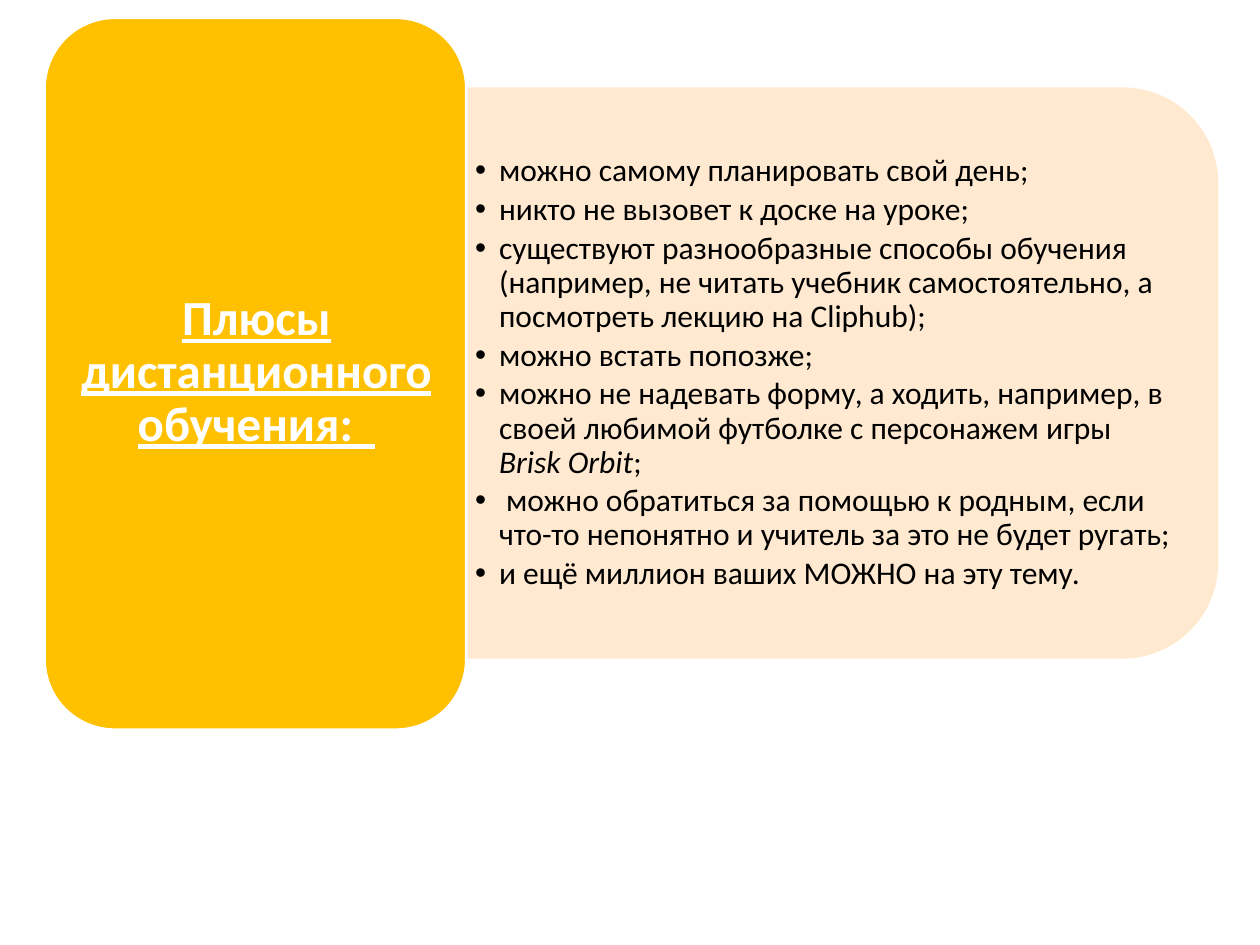
from lxml.etree import SubElement
from pptx import Presentation
from pptx.dml.color import RGBColor
from pptx.enum.shapes import MSO_SHAPE
from pptx.enum.text import MSO_ANCHOR, MSO_AUTO_SIZE, PP_ALIGN
from pptx.oxml.ns import qn
from pptx.util import Cm, Pt

COLORS = {"panel": "FFE8CC", "card": "FFC000", "white": "FFFFFF", "text": "000000"}
FONT = "Calibri"
TITLE = "Плюсы дистанционного обучения:  "
ADVANTAGES = [
    ["можно самому планировать свой день;"],
    ["никто не вызовет к доске на уроке;"],
    ["существуют разнообразные способы обучения (например, не читать учебник "
     "самостоятельно, а посмотреть лекцию на Cliphub);"],
    ["можно встать попозже;"],
    ["можно не надевать форму, а ходить, например, в своей любимой футболке "
     "с персонажем игры ", "Brisk Orbit", ";"],
    [" можно обратиться за помощью к родным, если что-то непонятно и учитель "
     "за это не будет ругать;"],
    ["и ещё миллион ваших МОЖНО на эту тему."],
]


def color(name):
    """Return the named palette colour."""
    return RGBColor.from_string(COLORS[name])


def add_backdrop(slide, kind, box, fill, line, line_width):
    """Add a filled shape behind the placeholders."""
    shape = slide.shapes.add_shape(kind, *map(Cm, box))
    shape.shadow.inherit = False
    shape.fill.solid()
    shape.fill.fore_color.rgb = color(fill)
    shape.line.color.rgb = color(line)
    shape.line.width = Pt(line_width)
    tree = shape.element.getparent()
    tree.insert(2, shape.element)
    return shape


def set_opacity(shape, percent):
    """Make the fill and line of a shape partly transparent."""
    for element in shape.element.spPr.iter(qn("a:srgbClr")):
        SubElement(element, qn("a:alpha"), val=str(percent * 1000))


def place_frame(placeholder, box, margins):
    """Position a placeholder and return its middle-anchored text frame."""
    placeholder.left, placeholder.top, placeholder.width, placeholder.height = map(Cm, box)
    frame = placeholder.text_frame
    frame.word_wrap = True
    frame.auto_size = MSO_AUTO_SIZE.NONE
    frame.vertical_anchor = MSO_ANCHOR.MIDDLE
    frame.margin_left = frame.margin_right = Cm(margins[0])
    frame.margin_top = frame.margin_bottom = Cm(margins[1])
    return frame


def format_paragraph(paragraph, alignment, space_after):
    """Set alignment and spacing of a paragraph."""
    paragraph.alignment = alignment
    paragraph.line_spacing = 0.9
    paragraph.space_before = Pt(0)
    paragraph.space_after = Pt(space_after)


def format_run(run, size, fill):
    """Set font, size and colour of a run."""
    run.font.name = FONT
    run.font.size = Pt(size)
    run.font.color.rgb = color(fill)


def add_bullet(paragraph):
    """Give a paragraph a round bullet with a hanging indent."""
    properties = paragraph._p.get_or_add_pPr()
    properties.set("marL", str(Cm(0.48)))
    properties.set("indent", str(-Cm(0.48)))
    SubElement(properties, qn("a:buFont"), typeface="Arial")
    SubElement(properties, qn("a:buChar"), char="•")


def fill_title(placeholder):
    """Write the underlined heading on the card."""
    frame = place_frame(placeholder, (1.32, 0.76, 7.7, 13.52), (0.28, 0.15))
    frame.text = TITLE
    paragraph = frame.paragraphs[0]
    format_paragraph(paragraph, PP_ALIGN.CENTER, 0)
    run = paragraph.runs[0]
    format_run(run, 28, "white")
    run.font.bold = True
    run.font.underline = True


def fill_list(placeholder):
    """Write the bulleted advantages, with the game name in italics."""
    frame = place_frame(placeholder, (9.4, 2.34, 14.58, 10.36), (0.18, 0.1))
    for index, parts in enumerate(ADVANTAGES):
        paragraph = frame.add_paragraph() if index else frame.paragraphs[0]
        paragraph.level = 1
        add_bullet(paragraph)
        format_paragraph(paragraph, PP_ALIGN.LEFT, 2.7)
        for position, text in enumerate(parts):
            run = paragraph.add_run()
            run.text = text
            format_run(run, 18, "text")
            run.font.italic = position == 1


def main():
    """Build and save the slide."""
    presentation = Presentation()
    presentation.slide_width, presentation.slide_height = Cm(25.4), Cm(19.05)
    slide = presentation.slides.add_slide(presentation.slide_layouts[1])
    add_backdrop(slide, MSO_SHAPE.ROUNDED_RECTANGLE, (0.9, 0.36, 8.5, 14.35),
                 "card", "white", 1.5)
    panel = add_backdrop(slide, MSO_SHAPE.ROUND_2_SAME_RECTANGLE,
                         (11.23, -0.05, 11.48, 15.14), "panel", "panel", 1)
    panel.rotation = 90
    set_opacity(panel, 90)
    fill_title(slide.shapes.title)
    fill_list(slide.placeholders[1])
    presentation.save("out.pptx")


if __name__ == "__main__":
    main()
